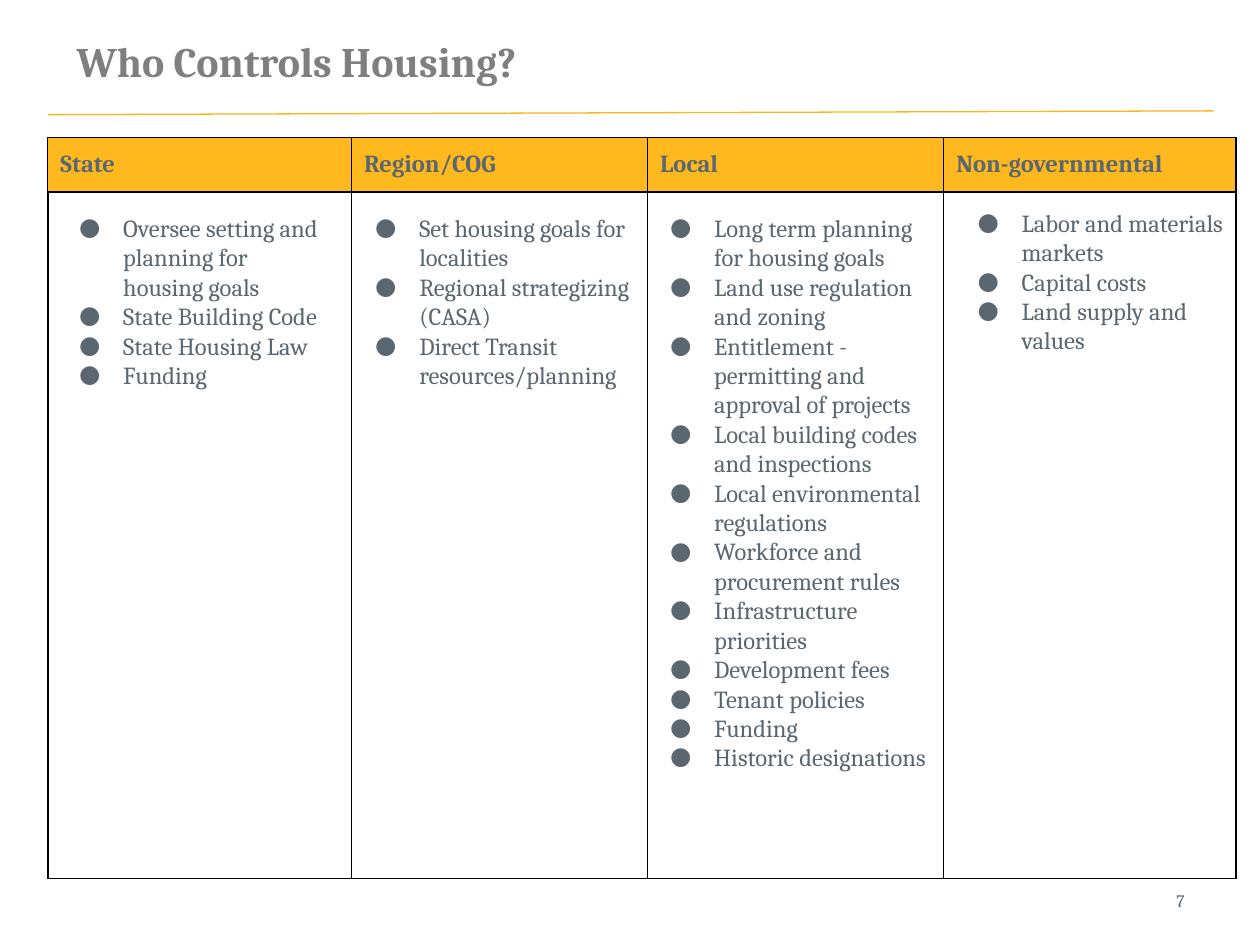
import dataclasses
import itertools

import lxml.etree
import pptx
import pptx.dml.color
import pptx.enum.shapes
import pptx.enum.text
import pptx.oxml
import pptx.oxml.ns
import pptx.util

Inches = pptx.util.Inches
Pt = pptx.util.Pt
qn = pptx.oxml.ns.qn
PP_ALIGN = pptx.enum.text.PP_ALIGN


@dataclasses.dataclass(frozen=True)
class Theme:
    """Colours, type sizes and line widths of the slide."""
    font: str = "Cambria"
    text: str = "5B6770"
    title: str = "7F7F7F"
    rule: str = "FEB516"
    header: str = "FFB81D"
    border: str = "000000"
    title_size: int = 24
    body_size: int = 14
    number_size: int = 10
    thin: float = 0.75
    thick: float = 1


THEME = Theme()
COL_WIDTHS = (2.41, 2.35, 2.35, 2.32)
ROW_HEIGHTS = (0.43, 5.45)
COLUMNS = (
    ("State", (0.38, 1.64, 2.34, 1.75), (
        "Oversee setting and planning for housing goals",
        "State Building Code",
        "State Housing Law",
        "Funding",
    )),
    ("Region/COG", (2.73, 1.64, 2.43, 1.51), (
        "Set housing goals for localities",
        "Regional strategizing (CASA)",
        "Direct Transit resources/planning",
    )),
    ("Local", (5.07, 1.64, 2.43, 5.28), (
        "Long term planning for housing goals",
        "Land use regulation and zoning",
        "Entitlement - permitting and approval of projects",
        "Local building codes and inspections",
        "Local environmental regulations",
        "Workforce and procurement rules",
        "Infrastructure priorities",
        "Development fees",
        "Tenant policies",
        "Funding",
        "Historic designations",
    )),
    ("Non-governmental", (7.51, 1.6, 2.35, 1.28), (
        "Labor and materials markets",
        "Capital costs",
        "Land supply and values",
    )),
)


def rgb(value):
    """Return a colour object for a hex value."""
    return pptx.dml.color.RGBColor.from_string(value)


def format_text(tf, size, color=THEME.text, bold=False):
    """Apply one font to every run of a text frame."""
    for r in itertools.chain.from_iterable(p.runs for p in tf.paragraphs):
        r.font.name = THEME.font
        r.font.size = Pt(size)
        r.font.bold = bold
        r.font.color.rgb = rgb(color)


def add_text(s, box, text, size, color=THEME.text, bold=False,
             anchor=pptx.enum.text.MSO_ANCHOR.MIDDLE):
    """Add a wrapped text box and return its text frame."""
    tf = s.shapes.add_textbox(*map(Inches, box)).text_frame
    tf.word_wrap = True
    tf.vertical_anchor = anchor
    tf.text = text
    format_text(tf, size, color, bold)
    return tf


def add_rule(s, start, end):
    """Draw the thin line under the title."""
    line = s.shapes.add_connector(pptx.enum.shapes.MSO_CONNECTOR.STRAIGHT,
                                  *map(Inches, start + end))
    line.line.color.rgb = rgb(THEME.rule)
    line.line.width = Pt(THEME.thin)
    lxml.etree.SubElement(line._element.spPr, qn("a:effectLst"))


def set_borders(cell, width):
    """Give a cell solid borders on all four sides."""
    tcPr = cell._tc.get_or_add_tcPr()
    for i, side in enumerate(("lnL", "lnR", "lnT", "lnB")):
        ln = lxml.etree.Element(qn("a:" + side), w=str(Pt(width)))
        fill = lxml.etree.SubElement(ln, qn("a:solidFill"))
        lxml.etree.SubElement(fill, qn("a:srgbClr"), val=THEME.border)
        tcPr.insert(i, ln)


def add_grid(s, left, top):
    """Add the table with its coloured header row and empty body row."""
    frame = s.shapes.add_table(2, len(COLUMNS), Inches(left), Inches(top),
                               Inches(sum(COL_WIDTHS)), Inches(sum(ROW_HEIGHTS)))
    table = frame.table
    table.horz_banding = False
    for row, height in zip(table.rows, ROW_HEIGHTS):
        row.height = Inches(height)
    for i, (heading, _, _) in enumerate(COLUMNS):
        table.columns[i].width = Inches(COL_WIDTHS[i])
        head, body = table.cell(0, i), table.cell(1, i)
        head.margin_left = head.margin_right = Inches(0.1)
        head.margin_top = head.margin_bottom = Inches(0.1)
        head.text = heading
        format_text(head.text_frame, THEME.body_size, bold=True)
        head.fill.solid()
        head.fill.fore_color.rgb = rgb(THEME.header)
        body.fill.background()
        set_borders(head, THEME.thin)
        set_borders(body, THEME.thick)


def add_bullets(s, box, items):
    """Add a bulleted list in the given box."""
    tf = add_text(s, box, "\n".join(items), THEME.body_size,
                  anchor=pptx.enum.text.MSO_ANCHOR.TOP)
    for p in tf.paragraphs:
        pPr = p._p.get_or_add_pPr()
        pPr.set("marL", str(Inches(0.5)))
        pPr.set("indent", str(Inches(-0.35)))
        color = lxml.etree.SubElement(pPr, qn("a:buClr"))
        lxml.etree.SubElement(color, qn("a:srgbClr"), val=THEME.text)
        lxml.etree.SubElement(pPr, qn("a:buFont"), typeface=THEME.font)
        lxml.etree.SubElement(pPr, qn("a:buChar"), char="●")


def main():
    """Build the slide and save it."""
    prs = pptx.Presentation()
    prs.slide_width, prs.slide_height = Inches(10), Inches(7.5)
    s = prs.slides.add_slide(prs.slide_layouts[6])
    number = add_text(s, (7.51, 6.95, 1.99, 0.4), "7", THEME.number_size)
    number.paragraphs[0].alignment = PP_ALIGN.RIGHT
    add_text(s, (0.51, 0.14, 9.61, 0.69), "Who Controls Housing?",
             THEME.title_size, THEME.title, bold=True)
    add_rule(s, (0.38, 0.91), (9.63, 0.88))
    add_grid(s, 0.38, 1.09)
    for _, box, items in COLUMNS:
        add_bullets(s, box, items)
    prs.save("out.pptx")


if __name__ == "__main__":
    main()
